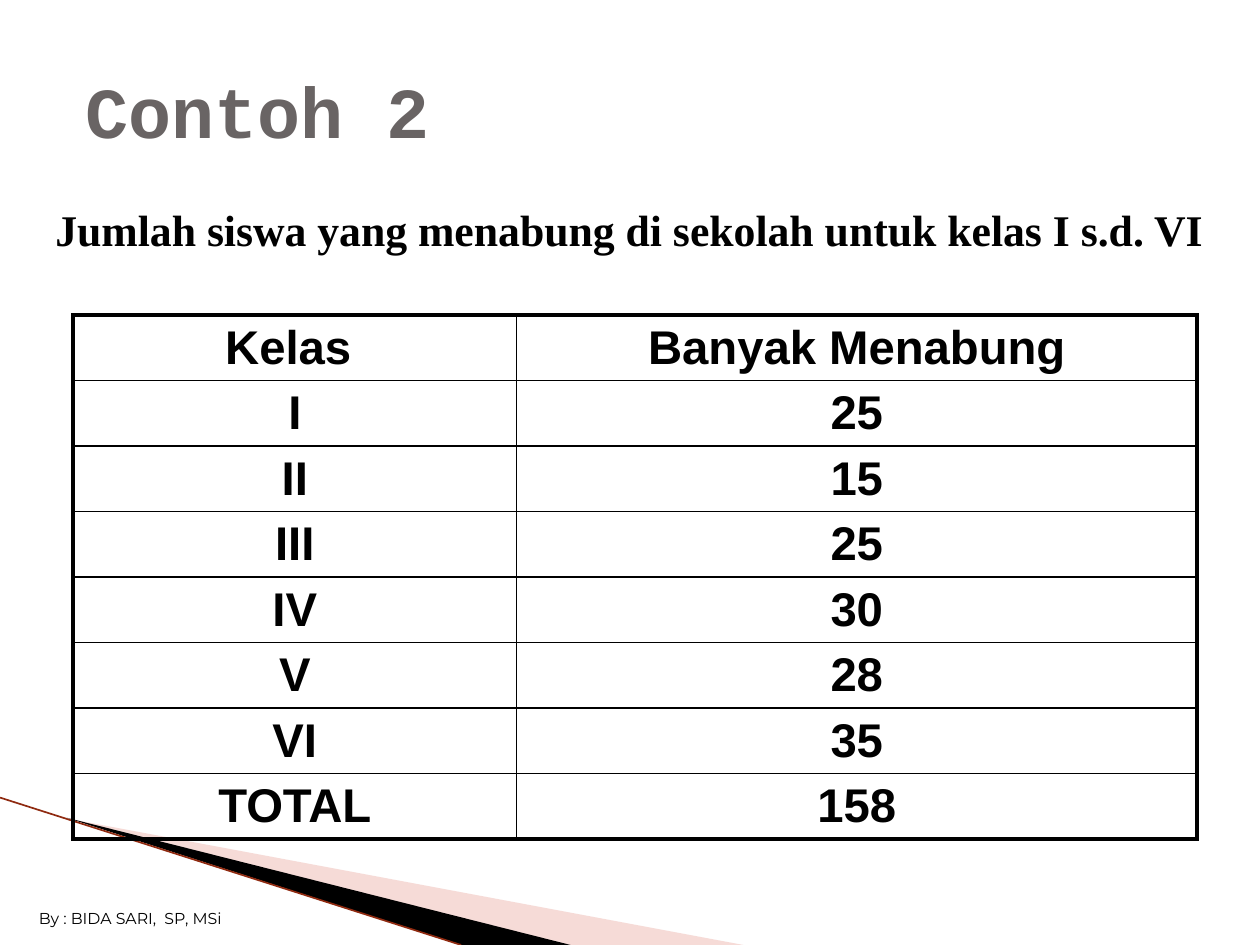
from dataclasses import dataclass

from lxml import etree
from pptx import Presentation, util as u
from pptx.dml.color import RGBColor
from pptx.enum import shapes, text
from pptx.oxml.ns import qn

WIDE, HIGH = 10, 7.5
BLACK = "000000"
THIN, THICK = 1, 2.25


@dataclass
class Style:
    font: str
    size: float
    color: str = BLACK
    bold: bool = True


@dataclass
class Label:
    words: str
    box: tuple[float, float, float, float]
    style: Style
    anchor: text.MSO_ANCHOR = text.MSO_ANCHOR.TOP
    wrap: bool = True
    indent: float = 0


@dataclass
class Wedge:
    points: list[tuple[float, float]]
    color: str
    alpha: int = 100


CELL = Style("Arial", 27)
ROWS = [
    ("Kelas ", "Banyak Menabung"),
    ("I", "25"),
    ("II", "15"),
    ("III", "25"),
    ("IV", "30"),
    ("V", "28"),
    ("VI", "35"),
    ("TOTAL", "158"),
]
COLS = (3.52, 5.4)
ROW = 0.52

WEDGES = [
    Wedge([(0.55, 6.5), (5.9, HIGH), (4.52, HIGH)], "E9A59D", 40),
    Wedge([(0.53, 6.49), (4.53, HIGH), (3.66, HIGH)], BLACK),
]
LABELS = [
    Label("Contoh 2", (0.58, 0.41, 3.25, 0.92),
          Style("Courier New", 41, "696464"), text.MSO_ANCHOR.MIDDLE, wrap=False),
    Label("Jumlah siswa yang menabung di sekolah untuk kelas I s.d. VI",
          (0.08, 1.56, 9.83, 0.52), Style("Times New Roman", 25), indent=0.26),
    Label("By : BIDA SARI,  SP, MSi", (0.21, 7.16, 1.87, 0.25),
          Style("Montserrat", 9, bold=False), wrap=False),
]


def rgb(code: str) -> RGBColor:
    return RGBColor.from_string(code)


def add_run(para, words: str, style: Style) -> None:
    run = para.add_run()
    run.text = words
    run.font.name = style.font
    run.font.size = u.Pt(style.size)
    run.font.bold = style.bold
    run.font.color.rgb = rgb(style.color)


def add_wedge(slide, wedge: Wedge) -> None:
    first, *rest = [(u.Inches(x), u.Inches(y)) for x, y in wedge.points]
    form = slide.shapes.build_freeform(*first)
    form.add_line_segments(rest, close=True)
    shape = form.convert_to_shape()
    shape.shadow.inherit = False
    shape.line.fill.background()
    shape.fill.solid()
    shape.fill.fore_color.rgb = rgb(wedge.color)
    if wedge.alpha < 100:
        tone = shape.fill._xPr.find(".//" + qn("a:srgbClr"))
        etree.SubElement(tone, qn("a:alpha"), val=str(wedge.alpha * 1000))


def add_edge(slide) -> None:
    ends = (0, 6.33, 3.66, HIGH)
    line = slide.shapes.add_connector(
        shapes.MSO_CONNECTOR.STRAIGHT, *map(u.Inches, ends))
    line.line.color.rgb = rgb("8F2A10")
    line.line.width = u.Pt(0.95)
    etree.SubElement(line._element.spPr, qn("a:effectLst"))


def set_sides(cell, sides: dict[str, float]) -> None:
    """Draw the cell's borders; they must come before its fill."""
    props = cell._tc.get_or_add_tcPr()
    for side, width in sides.items():
        edge = etree.SubElement(props, qn(f"a:ln{side}"), w=str(u.Pt(width)))
        fill = etree.SubElement(edge, qn("a:solidFill"))
        etree.SubElement(fill, qn("a:srgbClr"), val=BLACK)


def add_grid(slide) -> None:
    box = (0.58, 2.5, sum(COLS), ROW * len(ROWS))
    table = slide.shapes.add_table(
        len(ROWS), len(COLS), *map(u.Inches, box)).table
    table.first_row = table.horz_banding = False
    for col, width in zip(table.columns, COLS):
        col.width = u.Inches(width)
    for r, row in enumerate(ROWS):
        table.rows[r].height = u.Inches(ROW)
        for c, words in enumerate(row):
            cell = table.cell(r, c)
            set_sides(cell, {
                "L": THICK if c == 0 else THIN,
                "R": THICK if c == len(COLS) - 1 else THIN,
                "T": THICK if r == 0 else THIN,
                "B": THICK if r == len(ROWS) - 1 else THIN,
            })
            cell.fill.background()
            cell.margin_top, cell.margin_bottom = u.Inches(0.05), u.Inches(0.03)
            para = cell.text_frame.paragraphs[0]
            para.alignment = text.PP_ALIGN.CENTER
            add_run(para, words, CELL)


def add_label(slide, label: Label) -> None:
    frame = slide.shapes.add_textbox(*map(u.Inches, label.box)).text_frame
    frame.word_wrap = label.wrap
    frame.vertical_anchor = label.anchor
    frame.margin_left = u.Inches(0.1 + label.indent)
    add_run(frame.paragraphs[0], label.words, label.style)


def main() -> None:
    deck = Presentation()
    deck.slide_width, deck.slide_height = u.Inches(WIDE), u.Inches(HIGH)
    slide = deck.slides.add_slide(deck.slide_layouts[6])
    for wedge in WEDGES:
        add_wedge(slide, wedge)
    add_edge(slide)
    add_grid(slide)
    for label in LABELS:
        add_label(slide, label)
    deck.save("out.pptx")


if __name__ == "__main__":
    main()
